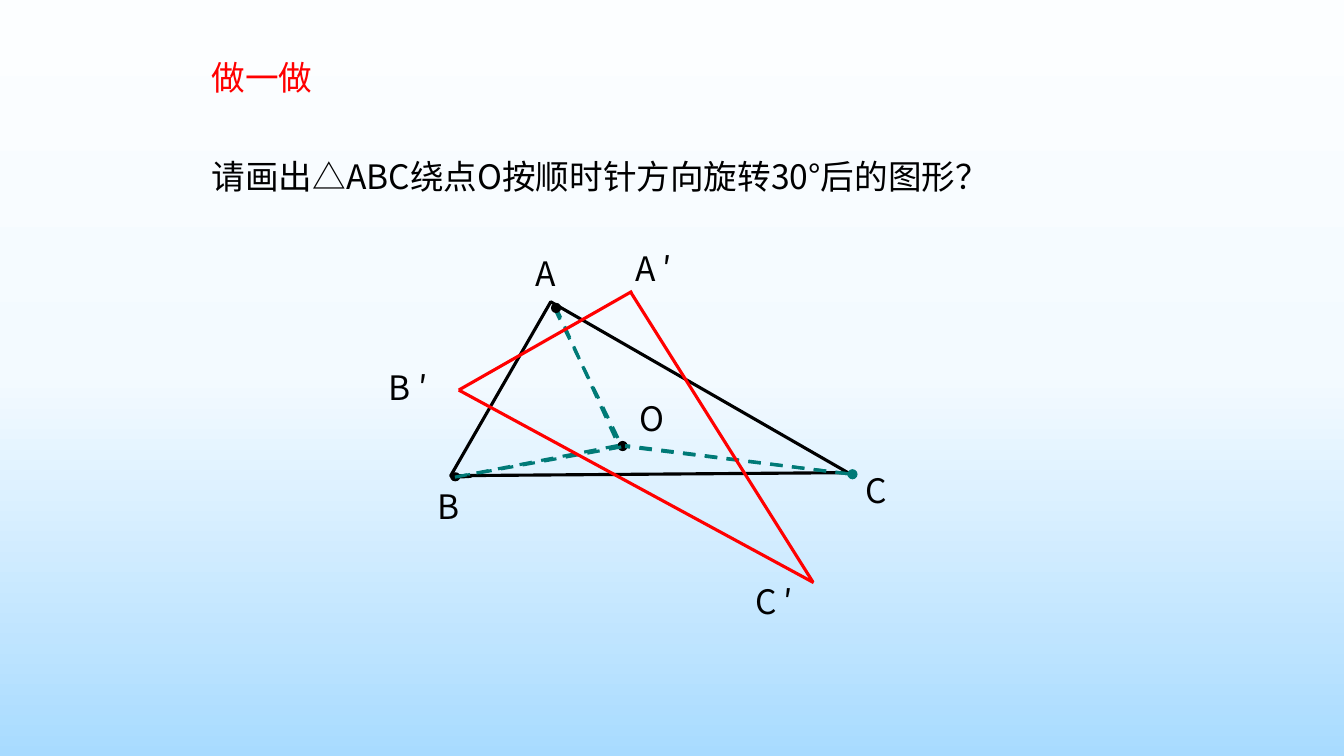
from copy import deepcopy
from dataclasses import dataclass

from lxml import etree
from pptx import Presentation
from pptx.dml.color import RGBColor
from pptx.enum.dml import MSO_LINE
from pptx.enum.shapes import MSO_CONNECTOR, MSO_SHAPE
from pptx.enum.text import MSO_ANCHOR, MSO_AUTO_SIZE, PP_ALIGN
from pptx.oxml.ns import qn
from pptx.util import Inches, Pt

BLACK = RGBColor(0x00, 0x00, 0x00)
RED = RGBColor(0xFF, 0x00, 0x00)
TEAL = RGBColor(0x00, 0x7A, 0x77)
SKY_STOPS = [
    (0, RGBColor(0xFC, 0xFE, 0xFF)),
    (0.5, RGBColor(0xF3, 0xFA, 0xFF)),
    (1, RGBColor(0xA8, 0xDB, 0xFF)),
]
FONT = "Noto Sans CJK SC"
STRAIGHT = MSO_CONNECTOR.STRAIGHT
DASH = MSO_LINE.DASH
OVAL = MSO_SHAPE.OVAL
RIGHT_TRIANGLE = MSO_SHAPE.RIGHT_TRIANGLE
LEFT, JUSTIFY = PP_ALIGN.LEFT, PP_ALIGN.JUSTIFY
TOP, MIDDLE = MSO_ANCHOR.TOP, MSO_ANCHOR.MIDDLE

FRAME_FORMAT = {
    "word_wrap": True,
    "auto_size": MSO_AUTO_SIZE.NONE,
    "margin_left": Inches(0.1),
    "margin_right": Inches(0.1),
    "margin_top": 0,
    "margin_bottom": 0,
}
FONT_FORMAT = {"name": FONT, "size": Pt(24), "bold": False}


@dataclass
class Label:
    text: str
    left: float
    top: float
    width: float
    height: float = 0.32


@dataclass
class Segment:
    start: tuple[float, float]
    end: tuple[float, float]
    color: RGBColor = TEAL
    dashed: bool = True


@dataclass
class Dot:
    left: float
    top: float
    width: float = 0.09
    height: float = 0.09
    color: RGBColor = BLACK


VERTEX_LABELS = [
    Label("A", 5.21, 2.51, 0.25),
    Label("B", 4.24, 4.82, 0.25),
    Label("C", 8.49, 4.66, 0.71, 0.47),
    Label("O", 6.24, 3.95, 0.59),
    Label("A ′", 6.2, 2.46, 1.1),
    Label("B ′", 3.76, 3.64, 1.1),
    Label("C ′", 7.39, 5.76, 1.18, 0.47),
]

# Back to front: spokes from O with their end dots, then the rotated triangle
CONSTRUCTION = [
    Segment((5.51, 3.04), (6.15, 4.45)),
    Segment((5.5, 3.06), (6.19, 4.47)),
    Dot(5.47, 3.01),
    Dot(6.13, 4.38),
    Dot(4.47, 4.69, height=0.08),
    Segment((4.54, 4.73), (6.24, 4.42)),
    Dot(4.47, 4.72, 0.21, 0.02),
    Segment((6.13, 4.42), (4.48, 4.74)),
    Segment((8.41, 4.7), (6.2, 4.42)),
    Segment((8.41, 4.7), (6.2, 4.43)),
    Dot(8.41, 4.66, color=TEAL),
    Segment((6.27, 2.89), (4.55, 3.87), RED, False),
    Segment((4.55, 3.87), (8.07, 5.78), RED, False),
    Segment((8.06, 5.77), (6.25, 2.89), RED, False),
]


def place(shape, left: float, top: float, width: float, height: float) -> None:
    shape.left, shape.top = Inches(left), Inches(top)
    shape.width, shape.height = Inches(width), Inches(height)


def write(shape, text: str, color: RGBColor, align: PP_ALIGN, anchor: MSO_ANCHOR) -> None:
    frame = shape.text_frame
    for name, value in FRAME_FORMAT.items():
        setattr(frame, name, value)
    frame.vertical_anchor = anchor
    paragraph = frame.paragraphs[0]
    paragraph.alignment = align
    paragraph.space_before = Pt(0)
    run = paragraph.add_run()
    run.text = text
    for name, value in FONT_FORMAT.items():
        setattr(run.font, name, value)
    run.font.color.rgb = color
    east_asian = etree.SubElement(run.font._element, qn("a:ea"))
    east_asian.set("typeface", FONT)


def draw_segment(slide, segment: Segment) -> None:
    ends = [Inches(value) for value in (*segment.start, *segment.end)]
    connector = slide.shapes.add_connector(STRAIGHT, *ends)
    connector.line.color.rgb = segment.color
    connector.line.width = Pt(2.25)
    if segment.dashed:
        connector.line.dash_style = DASH
    etree.SubElement(connector.element.spPr, qn("a:effectLst"))


def draw_dot(slide, dot: Dot) -> None:
    box = [Inches(value) for value in (dot.left, dot.top, dot.width, dot.height)]
    oval = slide.shapes.add_shape(OVAL, *box)
    oval.shadow.inherit = False
    oval.fill.solid()
    oval.fill.fore_color.rgb = dot.color
    oval.line.color.rgb = dot.color
    oval.line.width = Pt(0.75)


def paint_background(slide) -> None:
    fill = slide.background.fill
    fill.gradient()
    fill.gradient_angle = 270
    first_stop = slide.element.find(".//" + qn("a:gs"))
    first_stop.addnext(deepcopy(first_stop))
    for stop, (position, color) in zip(fill.gradient_stops, SKY_STOPS):
        stop.position = position
        stop.color.rgb = color


def draw_triangle_abc(slide) -> None:
    box = [Inches(value) for value in (4.74, 3.71, 3.4, 1.99)]
    triangle = slide.shapes.add_shape(RIGHT_TRIANGLE, *box)
    triangle.rotation = 29.9
    triangle.element.spPr.xfrm.set("flipV", "1")
    triangle.shadow.inherit = False
    triangle.fill.background()
    triangle.line.color.rgb = BLACK
    triangle.line.width = Pt(2.25)


def main() -> None:
    prs = Presentation()
    prs.slide_width, prs.slide_height = Inches(13.33), Inches(7.5)
    slide = prs.slides.add_slide(prs.slide_layouts[1])
    paint_background(slide)

    # Heading and task
    heading = slide.shapes.title
    place(heading, 2, 0.51, 1.84, 0.5)
    write(heading, "做一做", RED, LEFT, MIDDLE)

    task = slide.placeholders[1]
    place(task, 2, 1.5, 9.42, 0.5)
    task_format = task.text_frame.paragraphs[0]._p.get_or_add_pPr()
    task_format.set("marL", "0")
    task_format.set("indent", "0")
    etree.SubElement(task_format, qn("a:buNone"))
    write(task, "请画出△ABC绕点O按顺时针方向旋转30°后的图形？", BLACK, LEFT, MIDDLE)

    # Triangle and its rotation about O
    draw_triangle_abc(slide)
    for part in CONSTRUCTION:
        if isinstance(part, Dot):
            draw_dot(slide, part)
        else:
            draw_segment(slide, part)

    # Point names
    for label in VERTEX_LABELS:
        box = [Inches(value) for value in (label.left, label.top, label.width, label.height)]
        write(slide.shapes.add_textbox(*box), label.text, BLACK, JUSTIFY, TOP)

    prs.save("out.pptx")


if __name__ == "__main__":
    main()
